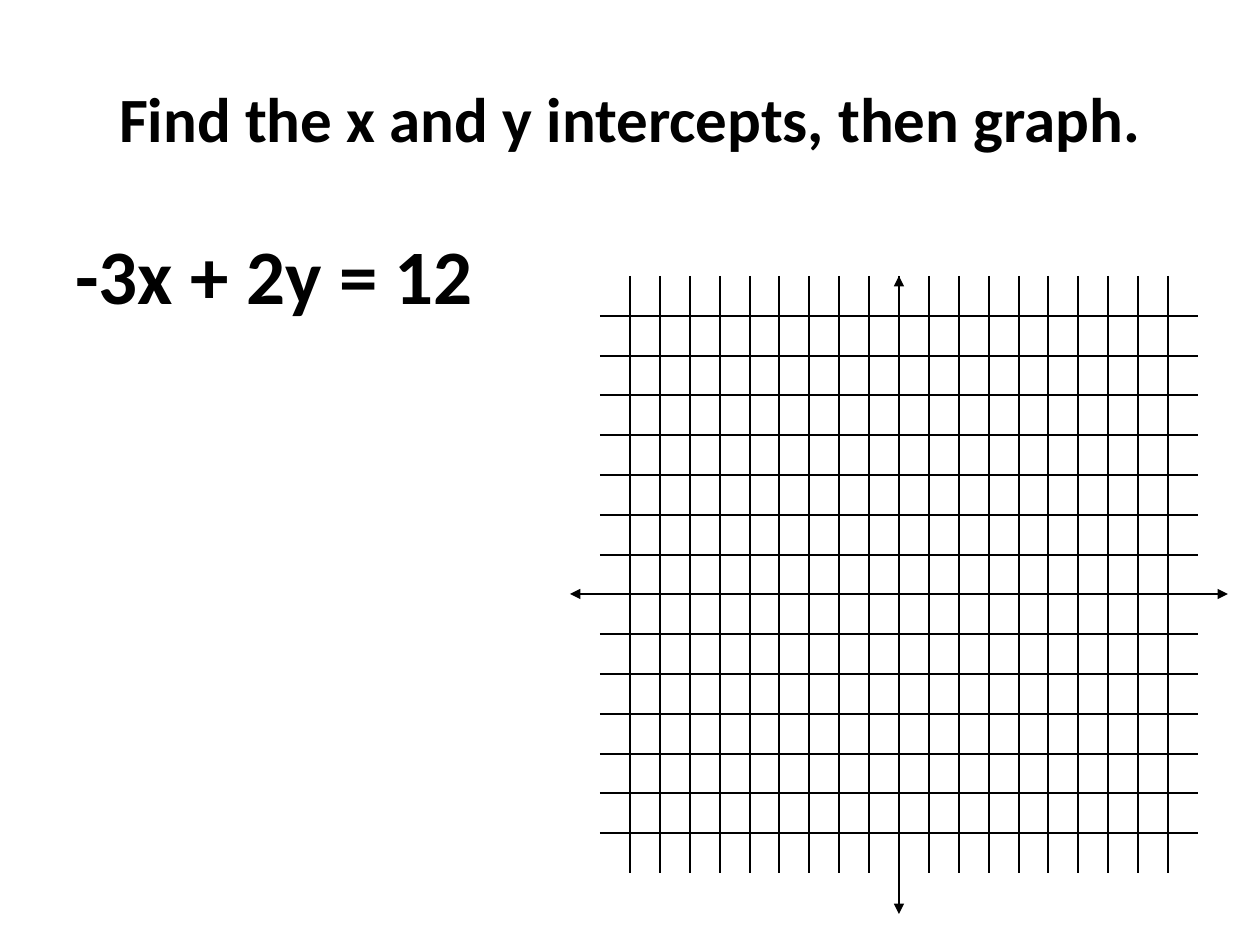
from dataclasses import dataclass

from lxml.etree import SubElement
from pptx import Presentation
from pptx.dml.color import RGBColor
from pptx.enum.shapes import MSO_CONNECTOR
from pptx.enum.text import MSO_ANCHOR, PP_ALIGN
from pptx.oxml.ns import qn
from pptx.shapes.shapetree import GroupShapes
from pptx.text.text import TextFrame
from pptx.util import Emu, Pt

BLACK = RGBColor(0x00, 0x00, 0x00)
WHITE = RGBColor(0xFF, 0xFF, 0xFF)
FONT = "Calibri"
PIXELS_PER_INCH = 126

# Coordinate grid, in px
LEFT, TOP, RIGHT, BOTTOM = 600, 276, 1198, 873
COLUMNS, ROWS = 20, 15
AXIS_COLUMN, AXIS_ROW = 10, 8


@dataclass(frozen=True)
class Line:
    x1: int
    y1: int
    x2: int
    y2: int
    points: float = 0.75
    arrow: bool = False


def px(length: int) -> Emu:
    return Emu(round(length * 914400 / PIXELS_PER_INCH))


def column_x(column: int) -> int:
    return round(LEFT + column * (RIGHT - LEFT) / COLUMNS)


def row_y(row: int) -> int:
    return round(TOP + row * (BOTTOM - TOP) / ROWS)


def draw_line(shapes: GroupShapes, line: Line) -> None:
    connector = shapes.add_connector(
        MSO_CONNECTOR.STRAIGHT, px(line.x1), px(line.y1), px(line.x2), px(line.y2)
    )
    connector.line.color.rgb = BLACK
    connector.line.width = Pt(line.points)
    if line.arrow:
        outline = connector._element.spPr.find(qn("a:ln"))
        SubElement(outline, qn("a:tailEnd"), type="triangle")
    SubElement(connector._element.spPr, qn("a:effectLst"))


def write_text(frame: TextFrame, text: str, size: int, align: PP_ALIGN) -> None:
    frame.word_wrap = True
    para = frame.paragraphs[0]
    para.alignment = align
    span = para.add_run()
    span.text = text
    span.font.name = FONT
    span.font.size = Pt(size)
    span.font.bold = True
    span.font.color.rgb = BLACK


def main() -> None:
    deck = Presentation()
    deck.slide_width, deck.slide_height = px(1260), px(945)
    page = deck.slides.add_slide(deck.slide_layouts.get_by_name("Title Only"))
    page.background.fill.solid()
    page.background.fill.fore_color.rgb = WHITE

    # Title
    title = page.shapes.title
    title.left, title.top, title.width, title.height = px(63), px(38), px(1134), px(158)
    title.text_frame.vertical_anchor = MSO_ANCHOR.MIDDLE
    write_text(
        title.text_frame, "Find the x and y intercepts, then graph.", 36, PP_ALIGN.CENTER
    )

    # Equation
    equation = page.shapes.add_textbox(px(63), px(221), px(494), px(116))
    write_text(equation.text_frame, "-3x + 2y = 12", 44, PP_ALIGN.LEFT)

    # Axes, with a short arrow at the left and top ends
    axis_x, axis_y = column_x(AXIS_COLUMN), row_y(AXIS_ROW)
    axes = [
        Line(LEFT, axis_y, 1228, axis_y, 1.5, True),
        Line(axis_x, TOP, axis_x, 914, 1.5, True),
        Line(axis_x, row_y(1), axis_x, TOP, arrow=True),
        Line(LEFT, axis_y, 570, axis_y, arrow=True),
    ]

    # Grid lines on both sides of the axes
    verticals = [
        Line(column_x(column), TOP, column_x(column), BOTTOM)
        for column in range(1, COLUMNS)
        if column != AXIS_COLUMN
    ]
    horizontals = [
        Line(LEFT, row_y(row), RIGHT, row_y(row))
        for row in range(1, ROWS)
        if row != AXIS_ROW
    ]

    graph = page.shapes.add_group_shape()
    for line in axes + verticals + horizontals:
        draw_line(graph.shapes, line)

    deck.save("out.pptx")


if __name__ == "__main__":
    main()
